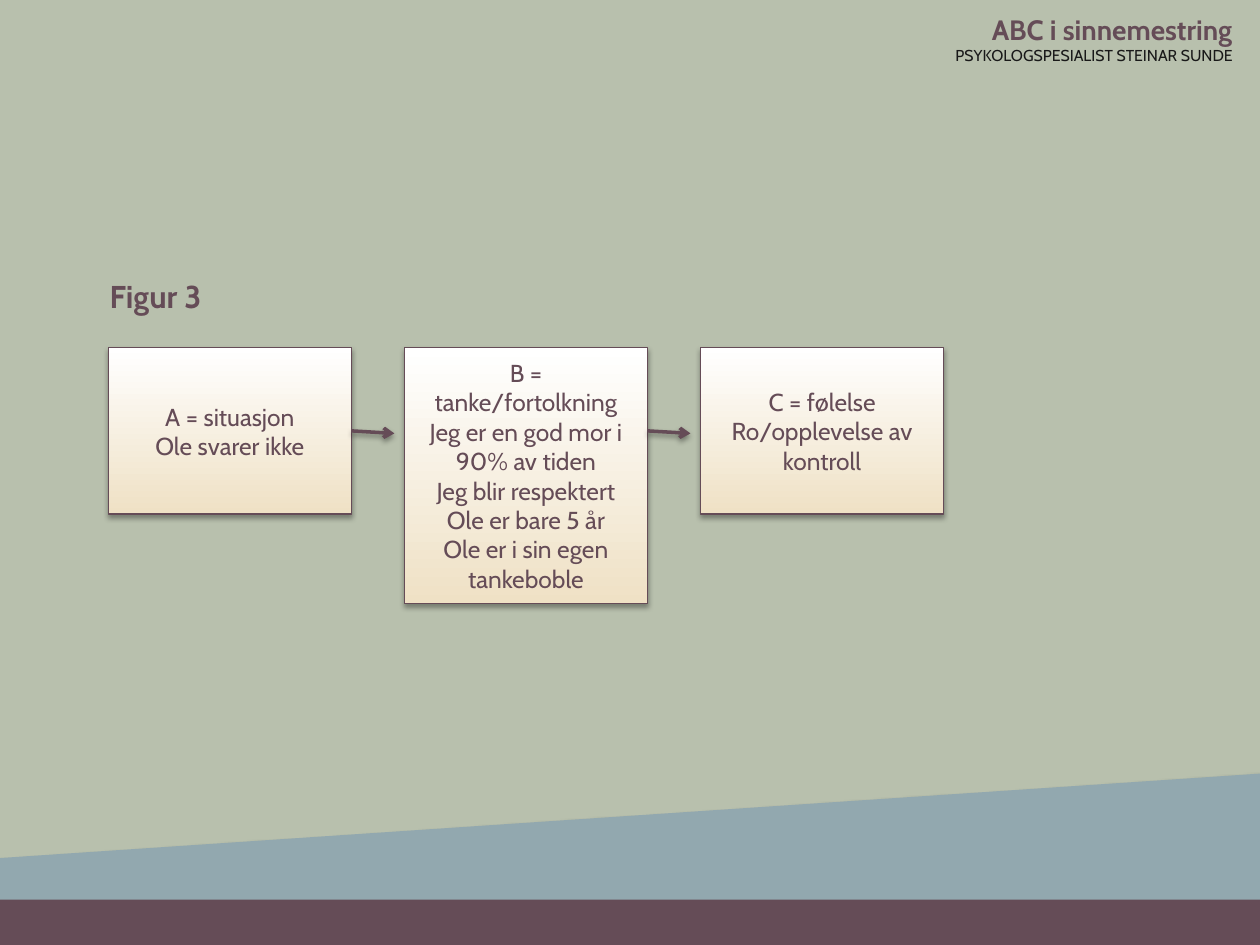
from dataclasses import dataclass

from lxml.etree import SubElement
from pptx import Presentation
from pptx.dml.color import RGBColor
from pptx.enum.shapes import MSO_CONNECTOR as Connector, MSO_SHAPE as Shape
from pptx.enum.text import MSO_ANCHOR as Anchor, MSO_AUTO_SIZE as AutoSize, PP_ALIGN as Align
from pptx.oxml.ns import qn
from pptx.util import Inches, Pt


@dataclass(frozen=True)
class Theme:
    font: str = "Cabin"
    plum: str = "654C57"
    sage: str = "B8C0AD"
    blue: str = "92A8AF"
    sand: str = "EFE1C5"
    white: str = "FFFFFF"
    ink: str = "191919"
    caption: int = 18
    heading: int = 16
    body: int = 14
    byline: int = 9


@dataclass(frozen=True)
class Box:
    left: float
    top: float
    width: float
    height: float

    @property
    def right(self):
        return self.left + self.width

    @property
    def bottom(self):
        return self.top + self.height

    def inches(self):
        return [Inches(v) for v in (self.left, self.top, self.width, self.height)]


THEME = Theme()
PAGE = Box(0, 0, 10, 7.5)
FOOTER_HEIGHT = 0.36
STEPS = [
    (["A = situasjon\vOle svarer ikke"], 1.32),
    (["B = tanke/fortolkning", "Jeg er en god mor i 90% av tiden",
      "Jeg blir respektert", "Ole er bare 5 år", "Ole er i sin egen tankeboble"], 2.03),
    (["C = følelse", "Ro/opplevelse av kontroll"], 1.32),
]


def rgb(code):
    return RGBColor.from_string(code)


def style(para, size, color=THEME.plum, bold=False, align=Align.LEFT):
    para.alignment = align
    font = para.font
    font.name, font.size, font.bold = THEME.font, Pt(size), bold
    font.color.rgb = rgb(color)


def add_effects(item):
    """Replace the inherited effects with an empty list and return it."""
    properties = item.element.spPr
    return SubElement(properties, qn("a:effectLst"))


def add_shadow(item, opacity=35, distance=1.8):
    shadow = SubElement(add_effects(item), qn("a:outerShdw"), blurRad=str(Pt(3.1)),
                        dist=str(Pt(distance)), dir="5400000", rotWithShape="0")
    black = SubElement(shadow, qn("a:srgbClr"), val="000000")
    SubElement(black, qn("a:alpha"), val=str(opacity * 1000))


def fill_plain(shape, color):
    shape.fill.solid()
    shape.fill.fore_color.rgb = rgb(color)
    shape.line.fill.background()


def add_backdrop(page, box):
    field = Box(box.left, box.top, box.width, box.height - FOOTER_HEIGHT)
    footer = Box(box.left, field.bottom, box.width, FOOTER_HEIGHT)

    panel = page.shapes.add_shape(Shape.RECTANGLE, *field.inches())
    fill_plain(panel, THEME.sage)
    add_shadow(panel)

    builder = page.shapes.build_freeform(Inches(box.left), Inches(6.81))
    corners = [(box.right, 6.14), (box.right, 7.48), (box.left, 7.48)]
    builder.add_line_segments([(Inches(x), Inches(y)) for x, y in corners])
    slope = builder.convert_to_shape()
    fill_plain(slope, THEME.blue)
    add_shadow(slope)

    bar = page.shapes.add_shape(Shape.RECTANGLE, *footer.inches())
    fill_plain(bar, THEME.plum)
    add_effects(bar)


def add_header(page, box):
    frame = page.shapes.add_textbox(*box.inches()).text_frame
    frame.word_wrap = True
    frame.auto_size = AutoSize.SHAPE_TO_FIT_TEXT
    frame.text = "ABC i sinnemestring\nPSYKOLOGSPESIALIST STEINAR SUNDE"
    heading, byline = frame.paragraphs
    style(heading, THEME.heading, bold=True, align=Align.RIGHT)
    style(byline, THEME.byline, THEME.ink, align=Align.RIGHT)


def place_title(page, box):
    title = page.shapes.title
    title.left, title.top, title.width, title.height = box.inches()
    # The title must lie in front of the backdrop.
    title.element.getparent().append(title.element)
    frame = title.text_frame
    frame.text = "Figur 3"
    frame.vertical_anchor = Anchor.TOP
    frame.auto_size = AutoSize.SHAPE_TO_FIT_TEXT
    style(frame.paragraphs[0], THEME.caption, bold=True)


def add_step(page, box, lines):
    card = page.shapes.add_shape(Shape.RECTANGLE, *box.inches())
    card.fill.gradient()
    card.fill.gradient_angle = 90
    for stop, color in zip(card.fill.gradient_stops, (THEME.sand, THEME.white)):
        stop.color.rgb = rgb(color)
    card.line.color.rgb = rgb(THEME.plum)
    card.line.width = Pt(0.75)
    add_shadow(card)
    frame = card.text_frame
    frame.word_wrap = True
    frame.vertical_anchor = Anchor.MIDDLE
    frame.text = "\n".join(lines)
    for para in frame.paragraphs:
        style(para, THEME.body, align=Align.CENTER)
    return card


def add_arrow(page, left, top):
    ends = (left, top, left + 0.34, top + 0.02)
    arrow = page.shapes.add_connector(Connector.STRAIGHT, *[Inches(v) for v in ends])
    arrow.line.color.rgb = rgb(THEME.plum)
    arrow.line.width = Pt(2)
    SubElement(arrow.element.spPr.find(qn("a:ln")), qn("a:tailEnd"), type="arrow")
    add_shadow(arrow, opacity=38, distance=1.6)
    return arrow


def add_flow(page, box):
    """Cards in equal columns, with an arrow from each one to the next."""
    gap = 0.42
    width = (box.width - gap * (len(STEPS) - 1)) / len(STEPS)
    arrow_top = box.top + STEPS[0][1] / 2
    cells = [Box(box.left + i * (width + gap), box.top, width, height)
             for i, (_, height) in enumerate(STEPS)]
    cards = [add_step(page, cell, lines) for cell, (lines, _) in zip(cells, STEPS)]
    arrows = [add_arrow(page, cell.right, arrow_top) for cell in cells[:-1]]
    # Only the first arrow leaves from the middle of its card's side.
    arrows[0].begin_connect(cards[0], 3)


def main():
    deck = Presentation()
    deck.slide_width, deck.slide_height = Inches(PAGE.width), Inches(PAGE.height)
    page = deck.slides.add_slide(deck.slide_layouts[5])
    add_backdrop(page, PAGE)
    add_header(page, Box(7.28, 0.05, 2.6, 0.54))
    add_flow(page, Box(0.86, 2.76, 6.63, 2.03))
    place_title(page, Box(0.77, 2.15, 6.63, 0.4))
    deck.save("out.pptx")


if __name__ == "__main__":
    main()
